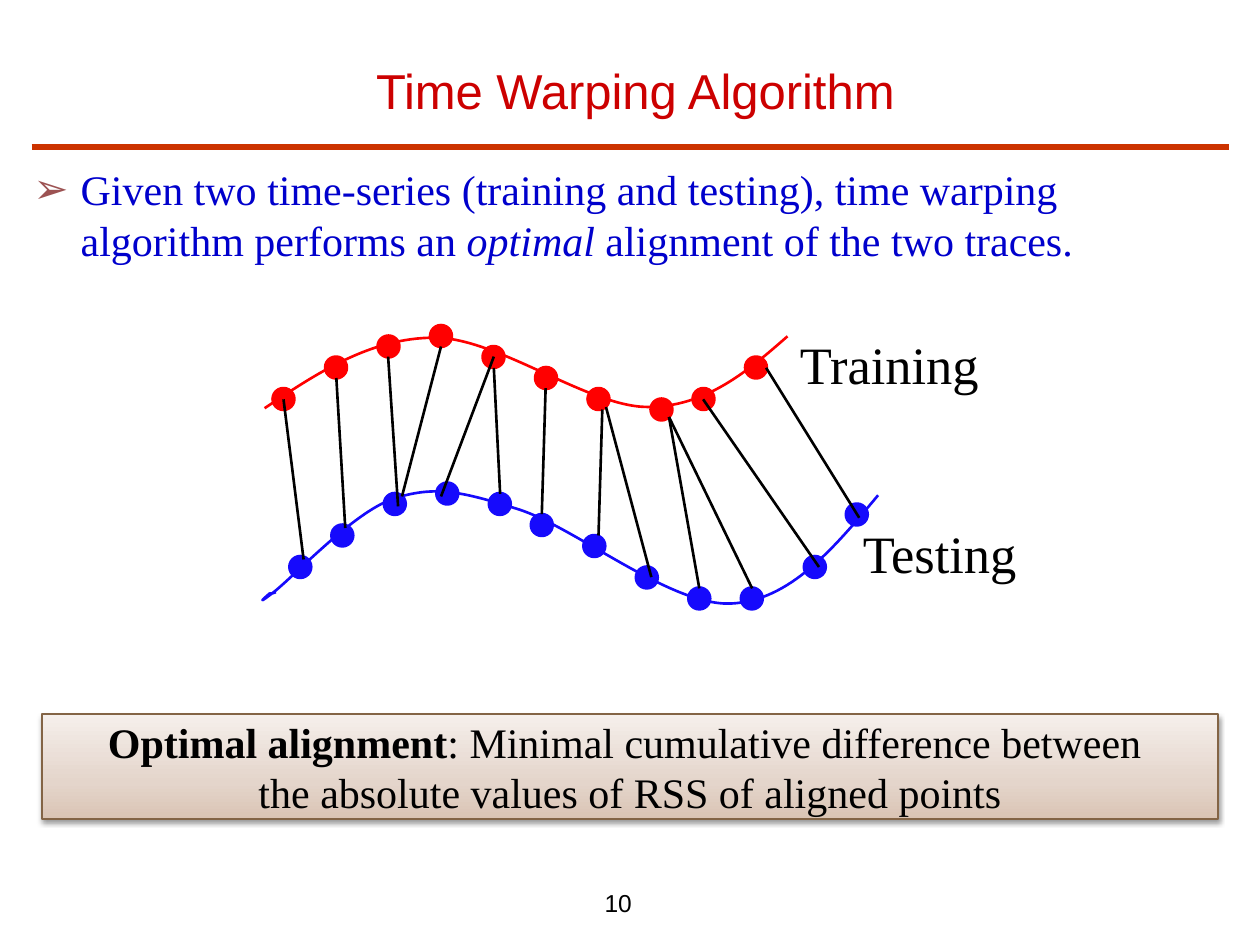
from copy import deepcopy
from lxml import etree
from pptx import Presentation, util as u
from pptx.dml import color
from pptx.enum import shapes as es, text as et
from pptx.oxml import ns

RED, BLUE, BLACK = "FF0000", "160AFC", "000000"
SERIF = "Times New Roman"
LEFT, MID = et.PP_ALIGN.LEFT, et.PP_ALIGN.CENTER
TOP, CORE, BASE = et.MSO_ANCHOR.TOP, et.MSO_ANCHOR.MIDDLE, et.MSO_ANCHOR.BOTTOM

RED_DOTS = [(156, 222), (186, 204), (216, 192), (246, 186), (276, 198),
            (306, 210), (336, 222), (372, 228), (396, 222), (426, 204)]
BLUE_DOTS = [(165.6, 318), (189.6, 300), (219.6, 282), (249.6, 276),
             (279.6, 282), (303.6, 294), (333.6, 306), (363.6, 324),
             (393.6, 336), (423.6, 336), (459.6, 318), (483.6, 288)]
RED_PATH = [(151.2, 233.3), (181.4, 213.1), (211.7, 193), (248.4, 193),
            (284.4, 193), (336.2, 232.6), (370.1, 232.6),
            (403.2, 232.6), (427, 212.4), (450, 192.2)]
BLUE_PATH = [(501.8, 283), (476.6, 313.2), (451.4, 343.4), (417.6, 344.9),
             (383, 346.3), (328.3, 301), (295.9, 290.9),
             (263.5, 280.8), (248.4, 277.2), (224.6, 285.1),
             (201.6, 293), (167.8, 329.8), (155.5, 339.1),
             (144, 347.8), (154.1, 339.1), (154.1, 339.1),
             (154.1, 339.1), (154.8, 339.1), (155.5, 339.1),
             (156.2, 339.1), (157, 338.4), (157.7, 338.4)]
LINKS = [(173.5, 319.7, 162, 228.2), (491, 295.9, 437.8, 210.2),
         (197.3, 301.7, 192.2, 216), (227.5, 289.4, 221.8, 203.8),
         (229.7, 283.7, 252, 198), (252, 283.7, 282.2, 203.8),
         (285.8, 282.2, 282.2, 210.2), (309.6, 293.8, 311.8, 221.8),
         (342, 306, 344.2, 234), (372.2, 329.8, 346.3, 232.6),
         (399.6, 336.2, 382.3, 238.3), (429.8, 336.2, 382.3, 238.3),
         (468, 324, 401.8, 228.2)]


def rgb(code):
    return color.RGBColor.from_string(code)


def ink(shape, code, width):
    shape.line.color.rgb = rgb(code)
    shape.line.width = u.Pt(width)


def write(frame, *paras, size=24, font=SERIF, code=BLACK, align=LEFT,
          anchor=TOP, wrap=True):
    frame.word_wrap = wrap
    frame.vertical_anchor = anchor
    for i, runs in enumerate(paras):
        para = frame.add_paragraph() if i else frame.paragraphs[0]
        para.alignment = align
        for words, style in runs:
            run = para.add_run()
            run.text = words
            run.font.size = u.Pt(size)
            run.font.name = font
            run.font.color.rgb = rgb(code)
            run.font.bold = style == "bold"
            run.font.italic = style == "italic"


def label(slide, box, *runs, **form):
    shape = slide.shapes.add_textbox(*map(u.Pt, box))
    write(shape.text_frame, runs, **form)
    return shape


def bullet(para, mark, code, indent):
    props = para._p.get_or_add_pPr()
    props.set("marL", str(u.Pt(indent)))
    props.set("indent", str(-u.Pt(indent)))
    tint = etree.SubElement(props, ns.qn("a:buClr"))
    etree.SubElement(tint, ns.qn("a:srgbClr"), val=code)
    etree.SubElement(props, ns.qn("a:buFont"), typeface="Arial")
    etree.SubElement(props, ns.qn("a:buChar"), char=mark)


def line(slide, ends, code, width):
    shape = slide.shapes.add_connector(es.MSO_CONNECTOR.STRAIGHT,
                                       *map(u.Pt, ends))
    ink(shape, code, width)
    etree.SubElement(shape._element.spPr, ns.qn("a:effectLst"))


def dot(slide, spot, code):
    shape = slide.shapes.add_shape(es.MSO_SHAPE.FLOWCHART_CONNECTOR,
                                   *map(u.Pt, (*spot, 12, 12)))
    shape.shadow.inherit = False
    shape.fill.solid()
    shape.fill.fore_color.rgb = rgb(code)
    ink(shape, code, 2)


def curve(slide, knots, code):
    pen = slide.shapes.build_freeform(*map(u.Pt, knots[0]))
    pen.add_line_segments([tuple(map(u.Pt, k)) for k in knots[1:]],
                          close=False)
    shape = pen.convert_to_shape()
    shape.shadow.inherit = False
    shape.fill.background()
    ink(shape, code, 1.5)
    track = shape._element.spPr.find(".//" + ns.qn("a:path"))
    parts = track.findall(ns.qn("a:lnTo"))
    for i in range(0, len(parts), 3):
        bend = etree.SubElement(track, ns.qn("a:cubicBezTo"))
        for part in parts[i:i + 3]:
            bend.append(part[0])
            track.remove(part)


def shade(shape, stops, angle):
    shape.fill.gradient()
    shape.fill.gradient_angle = angle
    items = shape._element.spPr.find(".//" + ns.qn("a:gsLst"))
    items.insert(1, deepcopy(items[0]))
    for item, stop, (place, code) in zip(items, shape.fill.gradient_stops,
                                         stops):
        item.set("pos", str(place * 1000))
        stop.color.rgb = rgb(code)


def shadow(shape, blur, gap, alpha):
    shape.shadow.inherit = False
    effects = shape._element.spPr.find(ns.qn("a:effectLst"))
    drop = etree.SubElement(effects, ns.qn("a:outerShdw"),
                            blurRad=str(u.Pt(blur)), dist=str(u.Pt(gap)),
                            dir="5400000", rotWithShape="0")
    tint = etree.SubElement(drop, ns.qn("a:srgbClr"), val=BLACK)
    etree.SubElement(tint, ns.qn("a:alpha"), val=str(alpha * 1000))


def banner(slide, box, *paras):
    shape = slide.shapes.add_shape(es.MSO_SHAPE.RECTANGLE, *map(u.Pt, box))
    shade(shape, [(0, "DAC4B4"), (35, "E4D5CB"), (100, "F5EFEB")], 90)
    ink(shape, "836445", 0.75)
    shadow(shape, 3.1, 1.6, 38)
    write(shape.text_frame, *paras, align=MID, anchor=CORE, wrap=False)


def main():
    deck = Presentation()
    deck.slide_width, deck.slide_height = u.Pt(720), u.Pt(540)
    slide = deck.slides.add_slide(deck.slide_layouts[6])

    label(slide, (338.4, 504, 31.7, 24), ("10", ""),
          size=14, font="Arial", wrap=False)
    line(slide, (18, 84, 702, 84), "CC3300", 3)
    label(slide, (18, 18, 690, 54), ("Time Warping Algorithm", ""),
          size=28, font="Arial", code="CC0000", align=MID, anchor=BASE)
    body = label(
        slide, (12, 90, 696, 84),
        ("Given two time-series (training and testing), time warping "
         "algorithm performs an ", ""),
        ("optimal", "italic"),
        (" alignment of the two traces.", ""), code="0000CC")
    bullet(body.text_frame.paragraphs[0], "➢", "9C5252", 27)

    banner(slide, (24, 408, 672, 60),
           [("Optimal alignment", "bold"),
            (": Minimal cumulative difference between ", "")],
           [("the absolute values of RSS of aligned points", "")])

    for knots, dots, code in ((RED_PATH, RED_DOTS, RED),
                              (BLUE_PATH, BLUE_DOTS, BLUE)):
        curve(slide, knots, code)
        for spot in dots:
            dot(slide, spot, code)
    for ends in LINKS:
        line(slide, ends, BLACK, 1.5)
    label(slide, (450, 186, 120, 44), ("Training", ""), size=30)
    label(slide, (486, 294, 120, 44), ("Testing", ""), size=30)

    deck.save("out.pptx")


if __name__ == "__main__":
    main()
